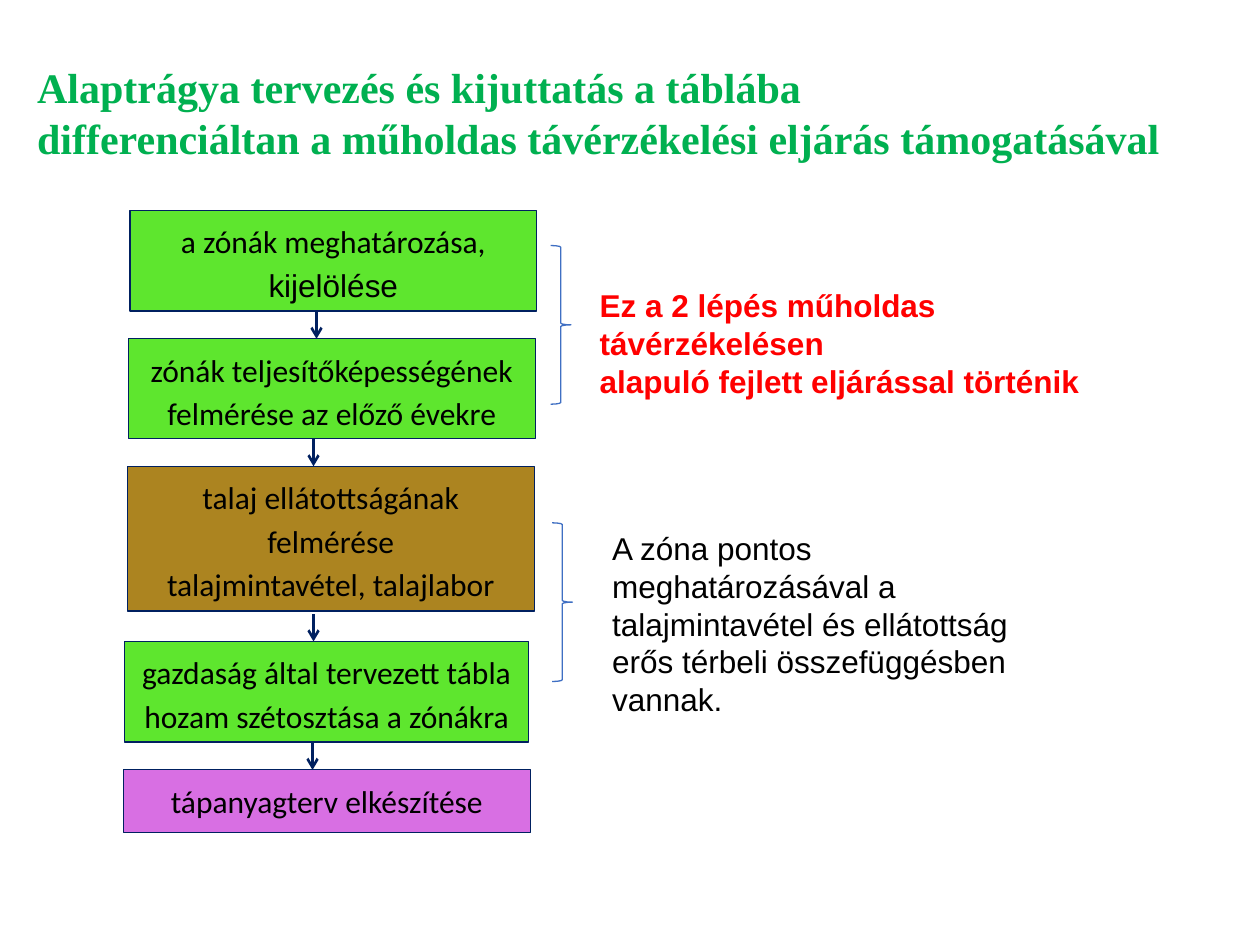
from lxml.etree import SubElement
from pptx import Presentation
from pptx.dml.color import RGBColor
from pptx.enum.shapes import MSO_CONNECTOR, MSO_SHAPE
from pptx.enum.text import MSO_ANCHOR, PP_ALIGN
from pptx.oxml.ns import qn
from pptx.util import Cm, Pt

GREEN, BROWN, VIOLET = "5EE62E", "AC8420", "D86FE3"
NAVY, BLUE, TITLE_GREEN = "002060", "3F6FC3", "00B050"
RED, BLACK = "FF0000", "000000"

STEPS = [
    (2.62, 4.24, 8.2, 2.03, GREEN, [("a zónák meghatározása,", "Calibri"), ("kijelölése", "Arial")]),
    (2.59, 6.83, 8.2, 2.01, GREEN,
     [("zónák teljesítőképességének felmérése az előző évekre", "Calibri")]),
    (2.57, 9.4, 8.2, 2.92, BROWN,
     [("talaj ellátottságának felmérése", "Calibri"), ("talajmintavétel, talajlabor", "Calibri")]),
    (2.51, 12.93, 8.15, 2.03, GREEN,
     [("gazdaság által tervezett tábla hozam szétosztása a zónákra", "Calibri")]),
    (2.49, 15.52, 8.2, 1.27, VIOLET, [("tápanyagterv elkészítése", "Calibri")]),
]
ARROW_CENTERS = [6.38, 6.32, 6.32, 6.3]
ARROW_LENGTH = 0.55
BRACES = [(11.1, 4.95), (11.13, 10.54)]


def color(value):
    return RGBColor.from_string(value)


def write(para, text, font="Arial", size=18, fill=BLACK, bold=False, align=PP_ALIGN.LEFT, spacing=None):
    para.alignment = align
    if spacing:
        para.line_spacing = spacing
    span = para.add_run()
    span.text = text
    span.font.name = font
    span.font.size = Pt(size)
    span.font.bold = bold
    span.font.color.rgb = color(fill)


class Diagram:
    def __init__(self, page, line_color, line_width):
        self.page = page
        self.line_color = line_color
        self.line_width = line_width

    def fill_text(self, frame, lines, **style):
        frame.word_wrap = True
        frame.vertical_anchor = MSO_ANCHOR.TOP
        for index, (text, font) in enumerate(lines):
            para = frame.add_paragraph() if index else frame.paragraphs[0]
            write(para, text, font=font, **style)

    def step(self, left, top, width, height, fill, lines):
        box = self.page.shapes.add_shape(
            MSO_SHAPE.RECTANGLE, Cm(left), Cm(top), Cm(width), Cm(height))
        box.shadow.inherit = False
        box.fill.solid()
        box.fill.fore_color.rgb = color(fill)
        box.line.color.rgb = color(self.line_color)
        box.line.width = Pt(self.line_width)
        self.fill_text(box.text_frame, lines, align=PP_ALIGN.CENTER, spacing=1.15)

    def arrow(self, center, end):
        arrow = self.page.shapes.add_connector(
            MSO_CONNECTOR.STRAIGHT, Cm(center), Cm(end - ARROW_LENGTH), Cm(center), Cm(end))
        arrow.line.color.rgb = color(self.line_color)
        arrow.line.width = Pt(2 * self.line_width)
        SubElement(arrow.line._get_or_add_ln(), qn("a:tailEnd"), type="arrow")
        SubElement(arrow._element.spPr, qn("a:effectLst"))

    def brace(self, left, top):
        brace = self.page.shapes.add_shape(
            MSO_SHAPE.RIGHT_BRACE, Cm(left), Cm(top), Cm(0.41), Cm(3.2))
        brace.shadow.inherit = False
        brace.fill.background()
        brace.line.color.rgb = color(BLUE)
        brace.line.width = Pt(self.line_width)

    def label(self, left, top, width, height, lines, font="Arial", **style):
        box = self.page.shapes.add_textbox(Cm(left), Cm(top), Cm(width), Cm(height))
        self.fill_text(box.text_frame, [(text, font) for text in lines], **style)


def main():
    deck = Presentation()
    deck.slide_width, deck.slide_height = Cm(25.4), Cm(19.05)
    page = deck.slides.add_slide(deck.slide_layouts[6])
    diagram = Diagram(page, NAVY, 0.75)

    for step in STEPS:
        diagram.step(*step)
    for center, following in zip(ARROW_CENTERS, STEPS[1:]):
        diagram.arrow(center, following[1])

    diagram.label(0.5, 1.12, 25.3, 2.31, [
        "Alaptrágya tervezés és kijuttatás a táblába",
        "differenciáltan a műholdas távérzékelési eljárás támogatásával",
    ], font="Times New Roman", size=24, fill=TITLE_GREEN, bold=True)
    diagram.label(12.09, 10.54, 9.88, 2.57, [
        "A zóna pontos meghatározásával a",
        "talajmintavétel és ellátottság",
        "erős térbeli összefüggésben vannak.",
    ])
    diagram.label(11.84, 5.64, 10.39, 1.8, [
        "Ez a 2 lépés műholdas távérzékelésen",
        "alapuló fejlett eljárással történik",
    ], fill=RED, bold=True)

    for brace in BRACES:
        diagram.brace(*brace)
    deck.save("out.pptx")


if __name__ == "__main__":
    main()
